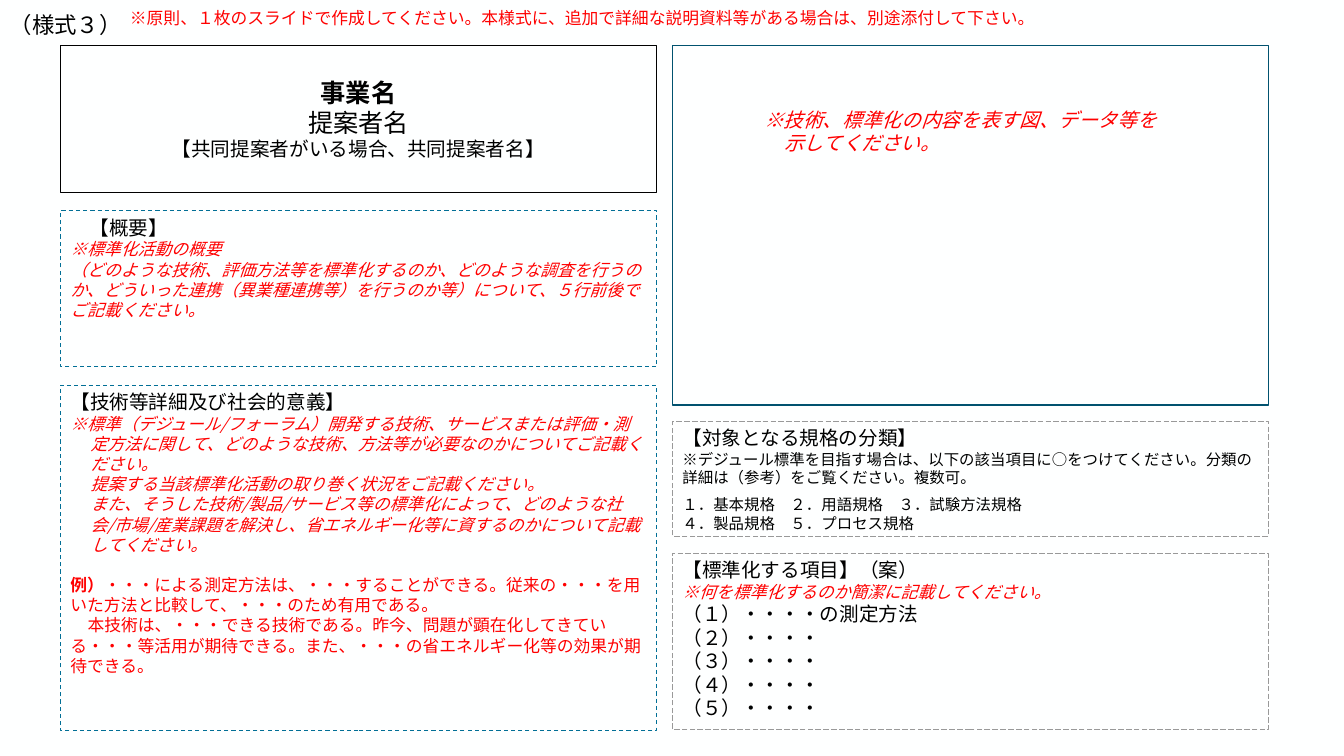
from dataclasses import dataclass
from lxml import etree
from pptx import Presentation
from pptx.dml.color import RGBColor
from pptx.enum.dml import MSO_LINE
from pptx.enum.shapes import MSO_SHAPE
from pptx.enum.text import MSO_ANCHOR, PP_ALIGN
from pptx.oxml.ns import qn
from pptx.util import Inches, Pt

RECT = MSO_SHAPE.RECTANGLE
DASH, LONG = MSO_LINE.DASH, MSO_LINE.LONG_DASH
TOP, MID = MSO_ANCHOR.TOP, MSO_ANCHOR.MIDDLE
LEFT, CENTER = PP_ALIGN.LEFT, PP_ALIGN.CENTER


@dataclass
class Theme:
    paper: str = "FEFFFF"
    ink: str = "000000"
    red: str = "FF0000"
    teal: str = "016F96"
    navy: str = "01526F"
    gray: str = "999999"
    sans: str = "Arial"
    plain: str = "Calibri"
    asian: str = "Noto Sans CJK JP"
    name: float = 18
    form: float = 16
    head: float = 14
    note: float = 12
    small: float = 11


def run(text, size, color, font, bold=False, italic=False):
    return text, size, color, font, bold, italic


def para(*runs, left=0, first=0, gap=0, align=LEFT):
    return runs, left, first, gap, align


class Sheet:
    def __init__(self, deck, theme):
        self.theme = theme
        self.slide = deck.slides.add_slide(deck.slide_layouts[6])
        fill = self.slide.background.fill
        fill.solid()
        fill.fore_color.rgb = RGBColor.from_string(theme.paper)

    def put_text(self, shape, paras, anchor=TOP):
        frame = shape.text_frame
        frame.word_wrap = True
        frame.vertical_anchor = anchor
        for i, (runs, left, first, gap, align) in enumerate(paras):
            p = frame.add_paragraph() if i else frame.paragraphs[0]
            p.alignment = align
            if gap:
                p.space_before = Pt(gap)
            if left or first:
                props = p._p.get_or_add_pPr()
                props.set("marL", str(Inches(left)))
                props.set("indent", str(Inches(first)))
            for text, size, color, font, bold, italic in runs:
                r = p.add_run()
                r.text = text
                r.font.size = Pt(size)
                r.font.bold = bold
                r.font.italic = italic
                r.font.color.rgb = RGBColor.from_string(color)
                r.font.name = font
                # East Asian face follows the latin one
                latin = r._r.get_or_add_rPr().find(qn("a:latin"))
                asian = etree.Element(qn("a:ea"), typeface=self.theme.asian)
                latin.addnext(asian)

    def box(self, area, color, width, paras=(), dash=None, anchor=TOP):
        shape = self.slide.shapes.add_shape(RECT, *map(Inches, area))
        shape.shadow.inherit = False
        shape.fill.background()
        shape.line.color.rgb = RGBColor.from_string(color)
        shape.line.width = Pt(width)
        if dash:
            shape.line.dash_style = dash
        self.put_text(shape, paras, anchor)

    def label(self, area, paras):
        self.put_text(self.slide.shapes.add_textbox(*map(Inches, area)), paras)


def main():
    deck = Presentation()
    deck.slide_width, deck.slide_height = Inches(13.33), Inches(7.5)
    t = Theme()
    sheet = Sheet(deck, t)
    west, east, wide, top = 0.6, 6.67, 5.91, 0.45

    def head(text):
        return run(text, t.head, t.ink, t.sans)

    def hint(text, size=t.note):
        return run(text, size, t.red, t.asian, italic=True)

    def red(text, bold=False):
        return run(text, t.note, t.red, t.asian, bold)

    def small(text):
        return run(text, t.small, t.ink, t.asian)

    # Technical details
    sheet.box((west, 3.82, wide, 3.43), t.teal, 0.75, [
        para(head("【技術等詳細及び社会的意義】")),
        para(hint("※標準（デジュール/フォーラム）開発する技術、サービスまたは評価・測定方法に関して、"
                  "どのような技術、方法等が必要なのかについてご記載ください。"), left=0.2, first=-0.2),
        para(hint("提案する当該標準化活動の取り巻く状況をご記載ください。"), left=0.2),
        para(hint("また、そうした技術/製品/サービス等の標準化によって、どのような社会/市場/産業課題を解決し、"
                  "省エネルギー化等に資するのかについて記載してください。"), left=0.2),
        para(red("例）", True),
             red("・・・による測定方法は、・・・することができる。従来の・・・を用いた方法と比較して、"
                 "・・・のため有用である。"), gap=14.4),
        para(red("本技術は、・・・できる技術である。昨今、問題が顕在化してきている・・・等活用が期待できる。"
                 "また、・・・の省エネルギー化等の効果が期待できる。"), first=0.17),
    ], DASH)

    # Items to standardize
    items = ["（１）・・・・の測定方法"] + [f"（{n}）・・・・" for n in "２３４５"]
    sheet.box((east, 5.49, wide, 1.75), t.gray, 0.5, [
        para(head("【標準化する項目】（案）")),
        para(hint("※何を標準化するのか簡潔に記載してください。")),
        *[para(head(item)) for item in items],
    ], LONG)

    # Project title
    sheet.box((west, top, wide, 1.46), t.ink, 1, [
        para(run("事業名", t.name, t.ink, t.sans, True), align=CENTER),
        para(run("提案者名", t.name, t.ink, t.sans), align=CENTER),
        para(head("【共同提案者がいる場合、共同提案者名】"), align=CENTER),
    ], anchor=MID)

    # Outline
    sheet.box((west, 2.09, wide, 1.55), t.teal, 0.75, [
        para(head("【概要】"), first=0.19),
        para(hint("※標準化活動の概要")),
        para(hint("（どのような技術、評価方法等を標準化するのか、どのような調査を行うのか、"
                  "どういった連携（異業種連携等）を行うのか等）について、５行前後でご記載ください。")),
    ], DASH)

    # Figure area
    sheet.label((7.48, 1.02, 4.22, 0.57), [
        para(hint("※技術、標準化の内容を表す図、データ等を示してください。", t.head),
             left=0.2, first=-0.2)])
    sheet.box((east, top, wide, 3.57), t.navy, 1)

    # Classes of standard
    sheet.box((east, 4.18, wide, 1.14), t.gray, 0.5, [
        para(head("【対象となる規格の分類】")),
        para(small("※デジュール標準を目指す場合は、以下の該当項目に○をつけてください。"
                   "分類の詳細は（参考）をご覧ください。複数可。")),
        para(small("１．基本規格　２．用語規格　３．試験方法規格"), gap=6),
        para(small("４．製品規格　５．プロセス規格")),
    ], LONG)

    # Form number and general note
    sheet.label((0, 0.06, 1.63, 0.37), [
        para(run("（様式３）", t.form, t.ink, t.plain))])
    sheet.label((1.19, 0.03, 11.22, 0.3), [
        para(run("※原則、１枚のスライドで作成してください。本様式に、追加で詳細な説明資料等がある場合は、"
                 "別途添付して下さい。", t.note, t.red, t.plain))])

    deck.save("out.pptx")


if __name__ == "__main__":
    main()
